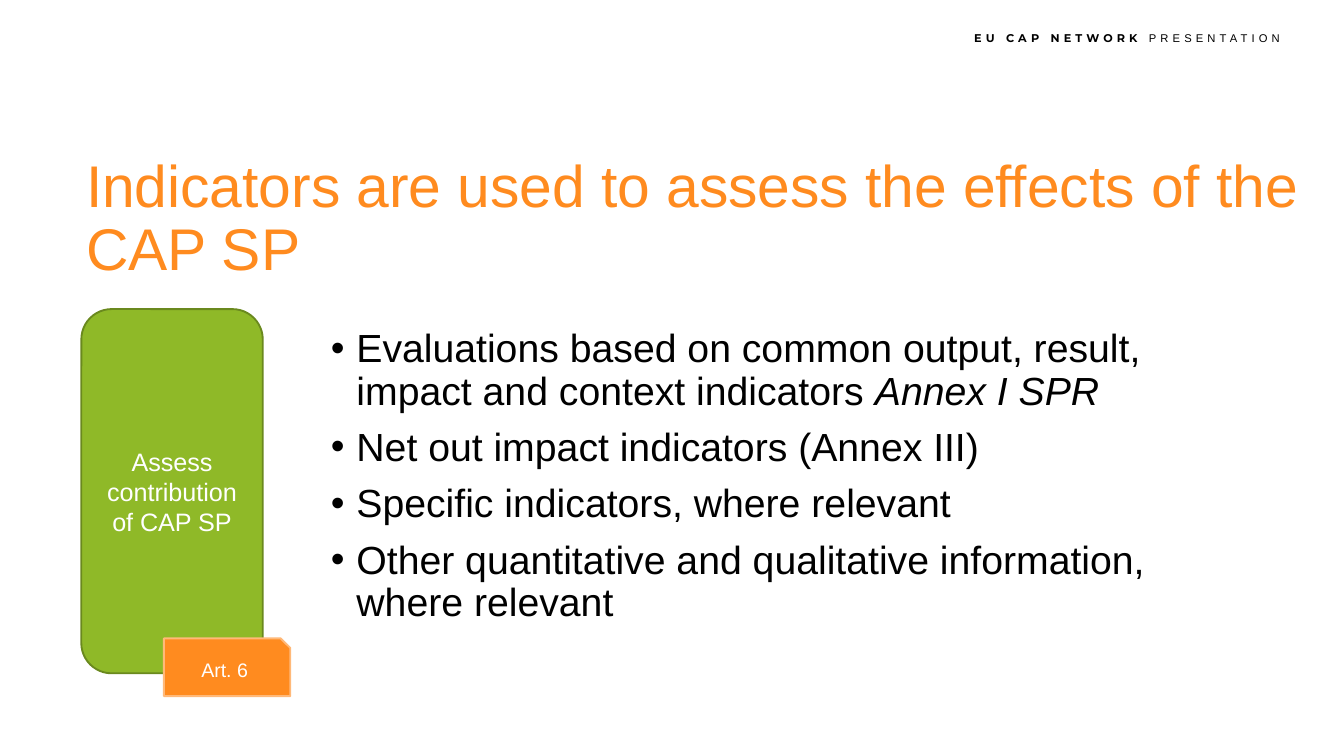
from dataclasses import dataclass
from lxml.etree import SubElement
from pptx import Presentation
from pptx.dml.color import RGBColor as RGB
from pptx.enum.shapes import MSO_SHAPE as Kind
from pptx.enum.text import MSO_ANCHOR as Anchor, MSO_AUTO_SIZE as Fit, PP_ALIGN as Align
from pptx.oxml.ns import qn
from pptx.util import Pt

PX = 4572  # EMU in one px, 200 px to the inch


@dataclass
class Theme:
    orange: str = "FF8B1F"
    peach: str = "FFB979"
    green: str = "8FB928"
    moss: str = "6A891E"
    black: str = "000000"
    white: str = "FFFFFF"
    face: str = "Arial"
    title: float = 31.5
    body: float = 21
    card: float = 13.5
    tag: float = 10.5
    head: float = 6


def box(*dims):
    return [n * PX for n in dims]


def write(frame, paras, size, color, align=Align.LEFT, anchor=Anchor.MIDDLE,
          line=1.0, gap=0, indent=0, track=0):
    """Fill a frame; each paragraph is a list of (text, font settings)."""
    frame.word_wrap = True
    frame.auto_size = Fit.NONE
    frame.vertical_anchor = anchor
    for i, runs in enumerate(paras):
        para = frame.paragraphs[0] if i == 0 else frame.add_paragraph()
        para.alignment = align
        para.line_spacing = line
        para.space_before = Pt(gap if i else 0)
        if indent:
            props = para._p.get_or_add_pPr()
            props.set("marL", str(indent * PX))
            props.set("indent", str(-indent * PX))
            SubElement(props, qn("a:buFont")).set("typeface", theme.face)
            SubElement(props, qn("a:buChar")).set("char", "•")
        for words, style in runs:
            run = para.add_run()
            run.text = words
            font = run.font
            font.size = Pt(size)
            font.color.rgb = RGB.from_string(color)
            font.name = style.get("face", theme.face)
            font.bold = style.get("bold", False)
            font.italic = style.get("italic", False)
            if track:
                run._r.get_or_add_rPr().set("spc", str(track))


theme = Theme()
deck = Presentation()
deck.slide_width, deck.slide_height = box(2000, 1125)
slide = deck.slides.add_slide(deck.slide_layouts[5])
shapes = slide.shapes

# Running header
head = shapes.add_textbox(*box(1008, 37, 916, 40))
write(head.text_frame,
      [[("EU CAP NETWORK ", {"face": "Montserrat", "bold": True}),
        ("PRESENTATION", {})]],
      theme.head, theme.black, align=Align.RIGHT, anchor=Anchor.TOP, track=220)

# Title
title = shapes.title
title.left, title.top, title.width, title.height = box(108, 218, 1876, 218)
write(title.text_frame,
      [[("Indicators are used to assess the effects of the CAP SP", {})]],
      theme.title, theme.orange, line=0.9)

# Bullet list
body = shapes.add_shape(Kind.ROUNDED_RECTANGLE, *box(468, 475, 1378, 532))
body.adjustments[0] = 0.03
body.shadow.inherit = False
body.fill.background()
body.line.fill.background()
write(body.text_frame,
      [[("Evaluations based on common output, result, impact and context indicators ", {}),
        ("Annex I SPR", {"italic": True})],
       [("Net out impact indicators (Annex III)", {})],
       [("Specific indicators, where relevant", {})],
       [("Other quantitative and qualitative information, where relevant", {})]],
      theme.body, theme.black, anchor=Anchor.TOP, line=0.9, gap=7.5, indent=38)

# Green card and its article tag
cards = [
    (Kind.ROUNDED_RECTANGLE, (121, 460, 270, 542), theme.green, theme.moss,
     "Assess contribution of CAP SP", theme.card),
    (Kind.SNIP_1_RECTANGLE, (244, 950, 188, 86), theme.orange, theme.peach,
     "Art. 6", theme.tag),
]
for kind, dims, fill, edge, words, size in cards:
    card = shapes.add_shape(kind, *box(*dims))
    card.shadow.inherit = False
    card.fill.solid()
    card.fill.fore_color.rgb = RGB.from_string(fill)
    card.line.color.rgb = RGB.from_string(edge)
    card.line.width = Pt(1)
    write(card.text_frame, [[(words, {})]], size, theme.white, align=Align.CENTER)

deck.save("out.pptx")
